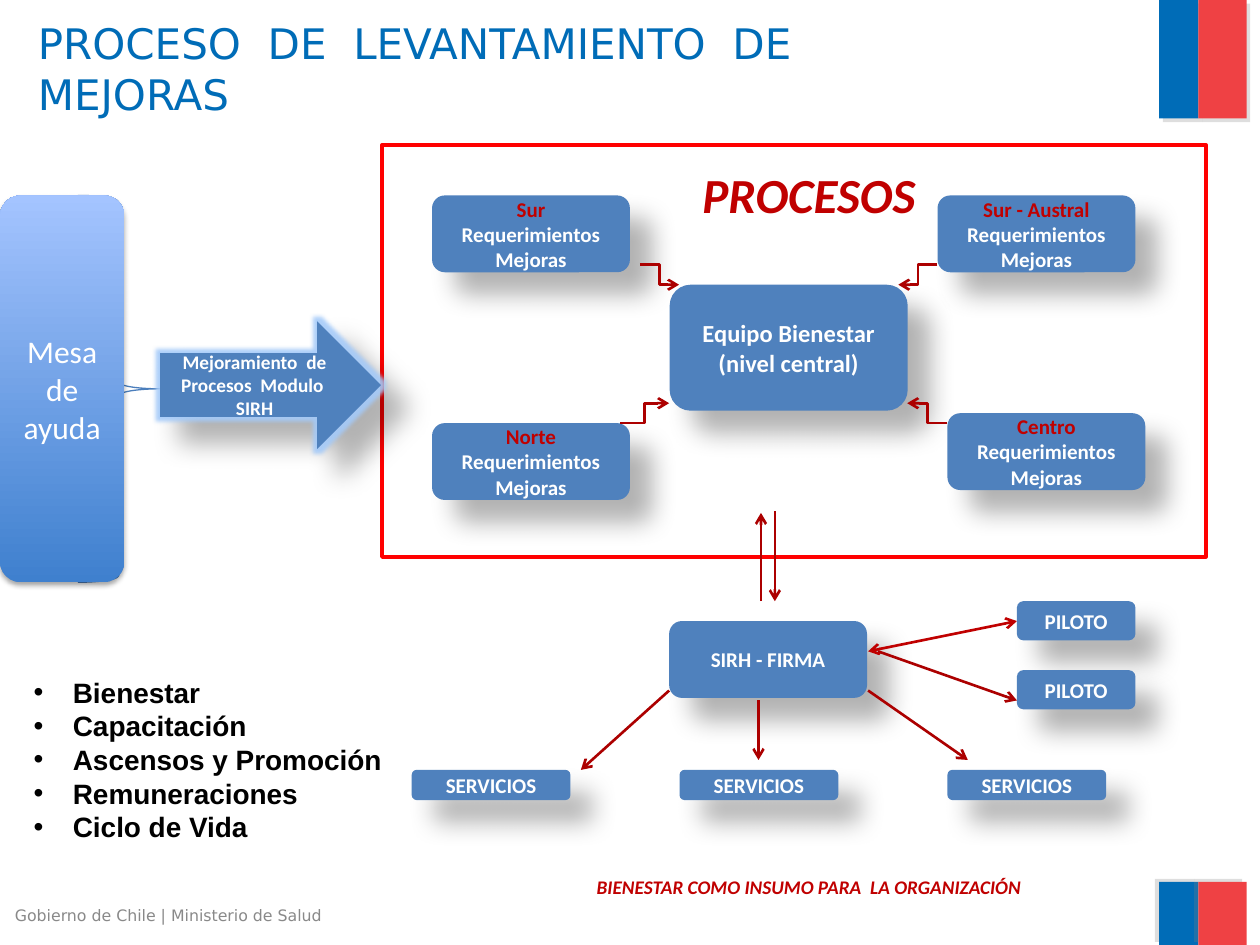
from pptx import Presentation, util as u
from pptx.dml.color import RGBColor
from pptx.enum import shapes, text
from pptx.oxml.ns import qn
from lxml import etree

COLORS = {
    "flag_blue": "006CB7", "flag_red": "EF4144", "box": "4F81BD",
    "white": "FFFFFF", "black": "000000", "gray": "898989",
    "flag_shadow": "808080", "accent": "C00000", "arrow": "AC0000",
    "frame": "FF0000", "brace": "4B7EBC", "glow": "A5CBFA",
    "grad_bottom": "3F80CE", "grad_top": "A4C4FF",
}
BOX_SHADOW = ("black", 30, 15, 18, 45)  # colour, opacity %, blur pt, distance pt, angle
SHAPE = shapes.MSO_SHAPE
ALIGN = text.PP_ALIGN


def rgb(name):
    return RGBColor.from_string(COLORS[name])


def cm(*values):
    return [u.Cm(v) for v in values]


def add_effect_color(effect, color, opacity):
    clr = etree.SubElement(effect, qn("a:srgbClr"), val=COLORS[color])
    etree.SubElement(clr, qn("a:alpha"), val=str(opacity * 1000))


def set_effects(sp, shadow=None, glow=None):
    sp.shadow.inherit = False
    effects = sp._element.spPr.find(qn("a:effectLst"))
    if glow:
        color, opacity, radius = glow
        el = etree.SubElement(effects, qn("a:glow"), rad=str(u.Pt(radius)))
        add_effect_color(el, color, opacity)
    if shadow:
        color, opacity, blur, dist, angle = shadow
        el = etree.SubElement(
            effects, qn("a:outerShdw"), blurRad=str(u.Pt(blur)),
            dist=str(u.Pt(dist)), dir=str(angle * 60000), algn="ctr", rotWithShape="0")
        add_effect_color(el, color, opacity)


def write(tf, lines, size=12, font="Calibri", color="white", first_color=None,
          bold=False, italic=False, align=ALIGN.CENTER,
          anchor=text.MSO_ANCHOR.TOP, bullet=None):
    """Fill a text frame, one paragraph per line."""
    tf.word_wrap = True
    tf.vertical_anchor = anchor
    for i, line in enumerate(lines):
        p = tf.paragraphs[0] if i == 0 else tf.add_paragraph()
        p.alignment = align
        r = p.add_run()
        r.text = line
        r.font.size = u.Pt(size)
        r.font.name = font
        r.font.bold = bold
        r.font.italic = italic
        r.font.color.rgb = rgb(first_color if first_color and i == 0 else color)
        if bullet:
            pPr = p._p.get_or_add_pPr()
            pPr.set("marL", str(u.Cm(0.79)))
            pPr.set("indent", str(-u.Cm(0.79)))
            etree.SubElement(pPr, qn("a:buFont"), typeface="Arial")
            etree.SubElement(pPr, qn("a:buChar"), char=bullet)


def add_shape(s, kind, box, fill=None, line=None, width=1, shadow=None, glow=None):
    sp = s.shapes.add_shape(kind, *cm(*box))
    if fill:
        sp.fill.solid()
        sp.fill.fore_color.rgb = rgb(fill)
    else:
        sp.fill.background()
    if line:
        sp.line.color.rgb = rgb(line)
        sp.line.width = u.Pt(width)
    else:
        sp.line.fill.background()
    set_effects(sp, shadow, glow)
    return sp


def add_box(s, box, lines, **fmt):
    sp = add_shape(s, SHAPE.ROUNDED_RECTANGLE, box, "box", shadow=BOX_SHADOW)
    write(sp.text_frame, lines, bold=True, anchor=text.MSO_ANCHOR.MIDDLE, **fmt)


def add_text(s, box, lines, **fmt):
    write(s.shapes.add_textbox(*cm(*box)).text_frame, lines, **fmt)


def add_arrow(s, points, elbow=False, color="arrow", both=False):
    kind = shapes.MSO_CONNECTOR.ELBOW if elbow else shapes.MSO_CONNECTOR.STRAIGHT
    cx = s.shapes.add_connector(kind, *cm(*points))
    cx.line.color.rgb = rgb(color)
    cx.line.width = u.Pt(1.5)
    ln = cx.line._get_or_add_ln()
    for end in ("a:headEnd", "a:tailEnd") if both else ("a:tailEnd",):
        etree.SubElement(ln, qn(end), type="arrow")
    etree.SubElement(cx._element.spPr, qn("a:effectLst"))


def add_flag_bars(s):
    for top, height, angle in ((0, 2.39, 45), (17.78, 1.27, 215)):
        for left, width, color in ((23.37, 0.79, "flag_blue"), (24.16, 0.97, "flag_red")):
            add_shape(s, SHAPE.RECTANGLE, (left, top, width, height), color,
                      shadow=("flag_shadow", 25, 0, 3, angle))


def add_title(s):
    title = s.shapes.title
    title.left, title.top, title.width, title.height = cm(0.51, 0.23, 15.7, 2.31)
    write(title.text_frame, ["PROCESO DE LEVANTAMIENTO DE MEJORAS"], size=24,
          font="DejaVu Sans", color="flag_blue", align=ALIGN.JUSTIFY)
    title.text_frame.auto_size = text.MSO_AUTO_SIZE.NONE


def add_help_desk(s):
    add_shape(s, SHAPE.RIGHT_BRACE, (1.57, 3.94, 1.65, 7.8), line="brace", width=0.75)
    desk = add_shape(s, SHAPE.ROUNDED_RECTANGLE, (0, 3.94, 2.51, 7.8),
                     shadow=("black", 35, 3.1, 1.8, 90))
    desk.fill.gradient()
    desk.fill.gradient_angle = 90
    for stop, color, pos in zip(desk.fill.gradient_stops, ("grad_bottom", "grad_top"), (0, 1)):
        stop.color.rgb = rgb(color)
        stop.position = pos
    write(desk.text_frame, ["Mesa de ayuda"], size=18, anchor=text.MSO_ANCHOR.MIDDLE)

    arrow = add_shape(s, SHAPE.RIGHT_ARROW, (3.23, 6.48, 4.45, 2.57), "box",
                      shadow=BOX_SHADOW, glow=("glow", 90, 5))
    write(arrow.text_frame, ["Mejoramiento  de Procesos  Modulo  SIRH"], size=11,
          bold=True, anchor=text.MSO_ANCHOR.MIDDLE)


def add_processes(s):
    add_box(s, (13.5, 5.74, 4.8, 2.54), ["Equipo Bienestar", "(nivel central)"], size=14)
    # Each region: name, box position, elbow arrow to the central team
    regions = (
        ("Sur", 8.71, 3.94, (12.9, 5.33, 13.69, 5.74)),
        ("Sur - Austral", 18.9, 3.94, (18.9, 5.33, 18.11, 5.74)),
        ("Norte", 8.71, 8.53, (12.5, 8.53, 13.49, 8.13)),
        ("Centro", 19.1, 8.33, (19.1, 8.53, 18.29, 8.13)),
    )
    for name, left, top, elbow in regions:
        add_box(s, (left, top, 3.99, 1.55), [name, "Requerimientos", "Mejoras"],
                first_color="accent")
        add_arrow(s, elbow, elbow=True)
    add_text(s, (11.71, 3.2, 9.19, 1.45), ["PROCESOS"], size=28, color="accent",
             bold=True, italic=True)
    add_shape(s, SHAPE.RECTANGLE, (7.7, 2.92, 16.61, 8.31), line="frame", width=2)


def add_rollout(s):
    add_box(s, (13.49, 12.52, 3.99, 1.55), ["SIRH - FIRMA"])
    for top in (12.12, 13.51):
        add_box(s, (20.5, top, 2.39, 0.79), ["PILOTO"])
    for i in range(3):
        add_box(s, (8.3 + 5.4 * i, 15.52, 3.2, 0.61), ["SERVICIOS"])
    for points in (
        (15.62, 10.31, 15.62, 12.12), (15.34, 12.12, 15.34, 10.34),  # to and from processes
        (13.49, 13.92, 11.71, 15.52), (15.29, 14.12, 15.29, 15.32),  # to services
        (17.5, 13.92, 19.51, 15.32),
        (17.7, 13.13, 20.5, 14.12),  # to the lower pilot
    ):
        add_arrow(s, points)
    add_arrow(s, (17.5, 13.13, 20.5, 12.52), color="accent", both=True)


def main():
    prs = Presentation()
    prs.slide_width, prs.slide_height = cm(25.4, 19.05)
    s = prs.slides.add_slide(prs.slide_layouts[5])

    add_flag_bars(s)
    add_title(s)
    add_processes(s)
    add_rollout(s)
    add_help_desk(s)

    # Topics and footer texts
    add_text(s, (0.43, 13.49, 7.85, 3.68),
             ["Bienestar", "Capacitación", "Ascensos y Promoción", "Remuneraciones",
              "Ciclo de Vida"],
             size=16, font="Arial", color="black", bold=True, align=ALIGN.LEFT, bullet="•")
    add_text(s, (6.3, 17.53, 20.02, 0.74), ["BIENESTAR COMO INSUMO PARA  LA ORGANIZACIÓN"],
             size=11, color="accent", bold=True, italic=True)
    add_text(s, (0.05, 18.14, 8.05, 0.69), ["Gobierno de Chile | Ministerio de Salud"],
             size=9, font="DejaVu Sans", color="gray", align=ALIGN.LEFT)
    prs.save("out.pptx")


if __name__ == "__main__":
    main()
